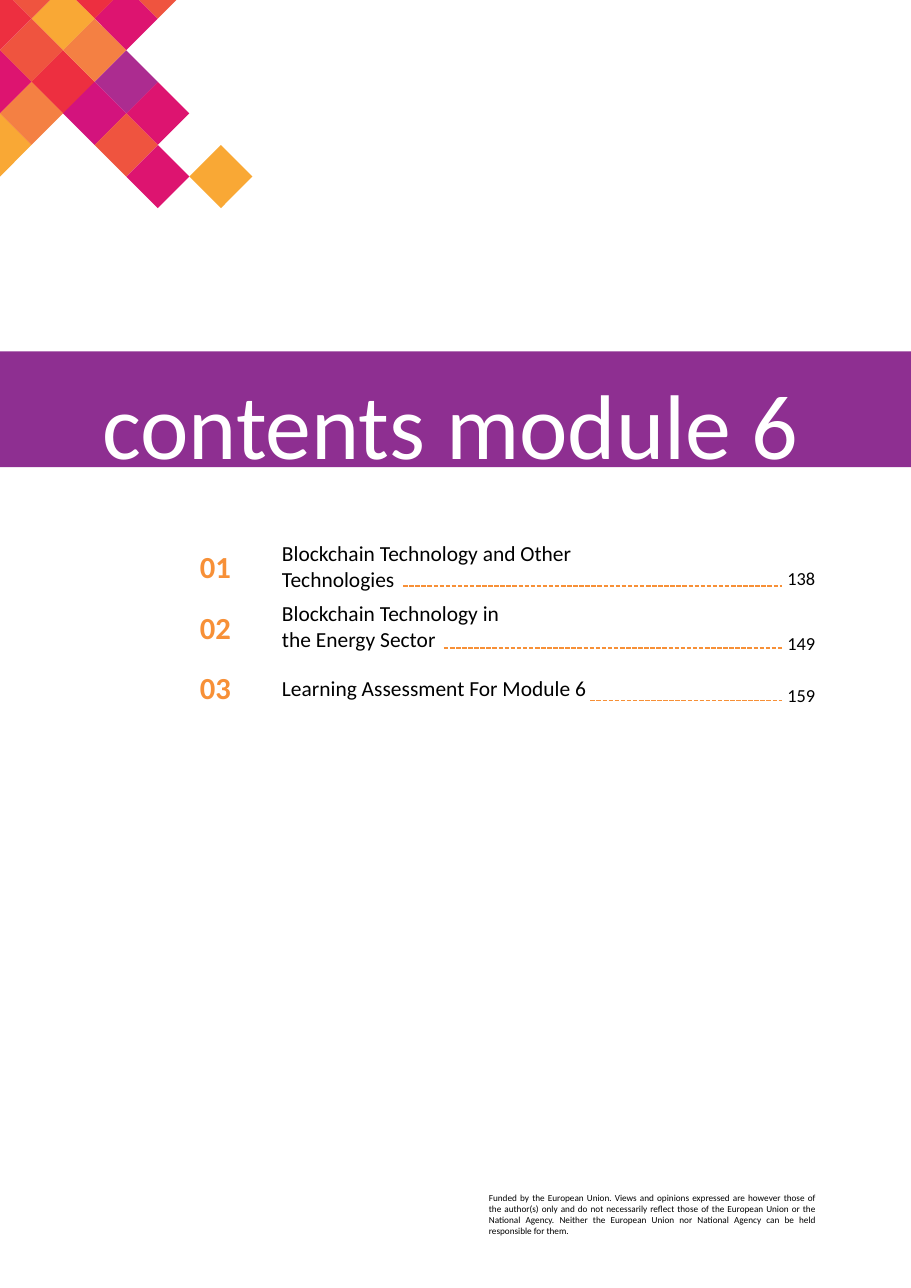
from lxml.etree import SubElement
from pptx import Presentation
from pptx.dml.color import RGBColor
from pptx.enum.dml import MSO_LINE
from pptx.enum.shapes import MSO_CONNECTOR, MSO_SHAPE
from pptx.enum.text import MSO_ANCHOR, MSO_AUTO_SIZE, PP_ALIGN
from pptx.oxml.ns import qn
from pptx.util import Inches, Pt

PAGE_WIDTH, PAGE_HEIGHT = 8.27, 11.69
PURPLE, ORANGE, WHITE, BLACK = "8E2F91", "F79037", "FFFFFF", "000000"
TILES = [
    (3, -1, "ED2F40"), (4, 0, "DD1470"), (5, -1, "EF543F"),
    (2, 0, "F9A835"), (1, 1, "EF543F"), (2, 2, "ED2F40"),
    (3, 1, "F48043"), (0, 2, "DD1470"), (0, 4, "F9A835"),
    (1, 3, "F48043"), (7, 5, "F9A835"), (5, 5, "DD1470"),
    (5, 3, "DD1470"), (4, 2, "AC2C90"), (3, 3, "D3137D"),
    (4, 4, "EF543F"), (1, -1, "EF543F"), (0, 0, "ED2F40"),
]
ENTRIES = [
    ("01", "Blockchain Technology and Other\nTechnologies", 0, "138", 0.3, 2.06, 0.37),
    ("02", "Blockchain Technology in\nthe Energy Sector", 5.8, "149", 0.89, 2.43, 0.93),
    ("03", "Learning Assessment For Module 6", 15, "159", 1.36, 3.76, 1.41),
]
FUNDING = (
    "Funded by the European Union. Views and opinions expressed are however those of "
    "the author(s) only and do not necessarily reflect those of the European Union or the "
    "National Agency. Neither the European Union nor National Agency can be held "
    "responsible for them."
)


def color(hex_string):
    return RGBColor.from_string(hex_string)


def place(shape, left, top, width, height):
    shape.left, shape.top = Inches(left), Inches(top)
    shape.width, shape.height = Inches(width), Inches(height)


def paint(shape, fill):
    shape.shadow.inherit = False
    shape.fill.solid()
    shape.fill.fore_color.rgb = color(fill)
    shape.line.fill.background()


def prepare_frame(shape, anchor=MSO_ANCHOR.TOP, inset=0.05):
    frame = shape.text_frame
    frame.word_wrap = True
    frame.auto_size = MSO_AUTO_SIZE.NONE
    frame.vertical_anchor = anchor
    frame.margin_left = frame.margin_right = Inches(0.1)
    frame.margin_top, frame.margin_bottom = Inches(inset), 0 if inset != 0.05 else Inches(inset)
    return frame


def write(paragraph, text, size, fill=BLACK, bold=False, align=PP_ALIGN.LEFT, before=0):
    paragraph.alignment = align
    paragraph.space_before = Pt(before)
    for index, line in enumerate(text.split("\n")):
        if index:
            paragraph.add_line_break()
        run = paragraph.add_run()
        run.text = line
        run.font.name = "Calibri"
        run.font.size = Pt(size)
        run.font.bold = bold
        run.font.color.rgb = color(fill)


def add_label(slide, box, text, anchor=MSO_ANCHOR.MIDDLE, **text_format):
    label = slide.shapes.add_textbox(*map(Inches, box))
    frame = prepare_frame(label, anchor)
    write(frame.paragraphs[0], text, **text_format)


def clip_at_zero(points, axis):
    clipped = []
    for start, end in zip(points, points[1:] + points[:1]):
        if start[axis] >= 0:
            clipped.append(start)
        if start[axis] * end[axis] < 0:
            share = start[axis] / (start[axis] - end[axis])
            clipped.append(tuple(a + share * (b - a) for a, b in zip(start, end)))
    return clipped


def add_mosaic(slide, left, top, step):
    mosaic = slide.shapes.add_group_shape()
    for column, row, fill in TILES:
        x, y = left + column * step, top + row * step
        corners = [(x - step, y), (x, y - step), (x + step, y), (x, y + step)]
        corners = clip_at_zero(clip_at_zero(corners, 0), 1)
        points = [(Inches(a), Inches(b)) for a, b in corners]
        builder = mosaic.shapes.build_freeform(*points[0])
        builder.add_line_segments(points[1:], close=True)
        paint(builder.convert_to_shape(), fill)


def add_title_band(slide, left, top, width, height):
    band = slide.shapes.add_shape(MSO_SHAPE.RECTANGLE, *map(Inches, (left, top, width, height)))
    paint(band, PURPLE)
    title = slide.shapes.title
    place(title, left + 0.83, top + 0.05, 7, 1.12)
    frame = prepare_frame(title, inset=0.1)
    write(frame.paragraphs[0], "contents module 6", size=60, fill=WHITE)
    title.element.getparent().append(title.element)


def add_leader(slide, start, end, y):
    leader = slide.shapes.add_connector(
        MSO_CONNECTOR.STRAIGHT, Inches(start), Inches(y), Inches(end), Inches(y)
    )
    leader.line.color.rgb = color(ORANGE)
    leader.line.width = Pt(1)
    leader.line.dash_style = MSO_LINE.SQUARE_DOT
    SubElement(leader.element.spPr, qn("a:effectLst"))


def add_contents(slide, left, top, width):
    entry_list = slide.placeholders[1]
    place(entry_list, left + 0.86, top - 0.05, 4.35, 1.5)
    frame = prepare_frame(entry_list, inset=0)
    for index, (number, text, before, page, page_top, start, y) in enumerate(ENTRIES):
        paragraph = frame.add_paragraph() if index else frame.paragraphs[0]
        write(paragraph, text, size=14, before=before)
        properties = paragraph._p.get_or_add_pPr()
        properties.set("marL", "0")
        properties.set("indent", "0")
        SubElement(properties, qn("a:buNone"))
        add_label(slide, (left, top + index * 0.55, 0.71, 0.38), number,
                  size=20, fill=ORANGE, bold=True, align=PP_ALIGN.CENTER)
        add_label(slide, (left + width - 0.5, top - 0.19 + page_top, 0.5, 0.38), page,
                  size=12, align=PP_ALIGN.RIGHT)
        add_leader(slide, left + start, left + width - 0.4, top + y)


def add_funding_note(slide, left, top, width, height):
    add_label(slide, (left, top, width, height), FUNDING, anchor=MSO_ANCHOR.TOP,
              size=6, align=PP_ALIGN.JUSTIFY)


def main():
    presentation = Presentation()
    presentation.slide_width = Inches(PAGE_WIDTH)
    presentation.slide_height = Inches(PAGE_HEIGHT)
    slide = presentation.slides.add_slide(presentation.slide_layouts[1])
    add_mosaic(slide, left=0, top=0.17, step=0.2865)
    add_title_band(slide, left=0, top=3.19, width=PAGE_WIDTH, height=1.05)
    add_contents(slide, left=1.6, top=4.95, width=5.9)
    add_funding_note(slide, left=4.34, top=10.77, width=3.16, height=0.5)
    presentation.save("out.pptx")


if __name__ == "__main__":
    main()
